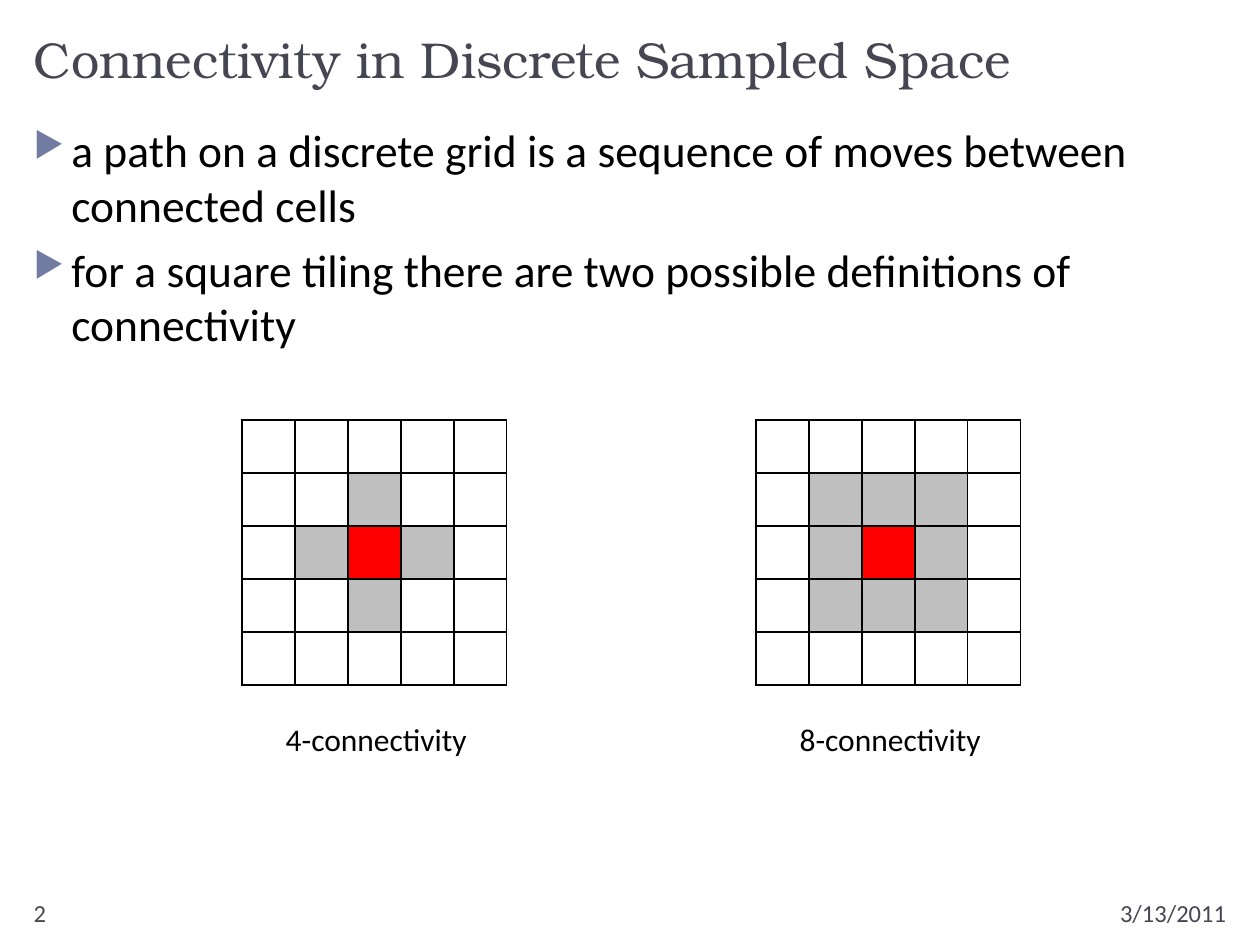
from lxml.etree import SubElement
from pptx import Presentation
from pptx.dml.color import RGBColor
from pptx.enum.text import MSO_ANCHOR, MSO_AUTO_SIZE, PP_ALIGN
from pptx.oxml.ns import qn
from pptx.util import Cm, Pt

COLOURS = {"slate": "464653", "ink": "000000", "bullet": "727CA3",
           ".": "FFFFFF", "n": "BFBFBF", "c": "FF0000"}
TITLE = "Connectivity in Discrete Sampled Space"
POINTS = [
    "a path on a discrete grid is a sequence of moves between connected cells",
    "for a square tiling there are two possible definitions of connectivity",
]
GRIDS = [
    ("4-connectivity", 4.88, [".....", "..n..", ".ncn.", "..n..", "....."]),
    ("8-connectivity", 15.24, [".....", ".nnn.", ".ncn.", ".nnn.", "....."]),
]
FOOTERS = [("3/13/2011", 20.32, 4.65, PP_ALIGN.RIGHT), ("2", 0.43, 5.51, PP_ALIGN.LEFT)]
FORMATS = {
    "title": {"name": "TeX Gyre Bonum", "size": Pt(28.8), "colour": "slate"},
    "point": {"name": "Calibri", "size": Pt(26), "colour": "ink"},
    "caption": {"name": "Calibri", "size": Pt(18), "colour": "ink"},
    "footer": {"name": "Calibri", "size": Pt(14), "colour": "slate"},
}
GRID_TOP, CELL = 8.47, 1.067
CAPTION_TOP, CAPTION_SHIFT = 14.39, 0.63


def rgb(key):
    """Return the named colour."""
    return RGBColor.from_string(COLOURS[key])


def write(shape, lines, style, align=PP_ALIGN.LEFT, **frame_values):
    """Fill a shape with formatted paragraphs."""
    frame = shape.text_frame
    frame.text = "\n".join(lines)
    values = {"word_wrap": True, "auto_size": MSO_AUTO_SIZE.NONE, **frame_values}
    for attribute, value in values.items():
        setattr(frame, attribute, value)
    for paragraph in frame.paragraphs:
        paragraph.alignment = align
        font = paragraph.runs[0].font
        for attribute, value in FORMATS[style].items():
            if attribute == "colour":
                font.color.rgb = rgb(value)
            else:
                setattr(font, attribute, value)
    return frame.paragraphs


def add_bullet(paragraph):
    """Give a paragraph a hanging triangle bullet."""
    paragraph.space_before = Pt(6)
    properties = paragraph._p.get_or_add_pPr()
    properties.set("marL", str(Cm(0.76)))
    properties.set("indent", str(-Cm(0.76)))
    colour = SubElement(properties, qn("a:buClr"))
    SubElement(colour, qn("a:srgbClr"), val=COLOURS["bullet"])
    SubElement(properties, qn("a:buSzPct"), val="76000")
    SubElement(properties, qn("a:buChar"), char="▶")


def add_borders(cell):
    """Draw a thin line on all sides of a cell."""
    properties = cell._tc.get_or_add_tcPr()
    for side in ("lnL", "lnR", "lnT", "lnB"):
        line = SubElement(properties, qn(f"a:{side}"), w=str(Pt(1)))
        fill = SubElement(line, qn("a:solidFill"))
        SubElement(fill, qn("a:srgbClr"), val=COLOURS["ink"])


def add_grid(slide, left, pattern):
    """Add a square grid coloured by its pattern."""
    count = len(pattern)
    side = Cm(CELL * count)
    grid = slide.shapes.add_table(count, count, Cm(left), Cm(GRID_TOP), side, side).table
    grid.first_row = grid.horz_banding = False
    for index, marks in enumerate(pattern):
        grid.rows[index].height = grid.columns[index].width = Cm(CELL)
        for column, mark in enumerate(marks):
            cell = grid.cell(index, column)
            add_borders(cell)
            cell.fill.solid()
            cell.fill.fore_color.rgb = rgb(mark)


def main():
    """Build and save the slide."""
    deck = Presentation()
    deck.slide_width, deck.slide_height = Cm(25.4), Cm(19.05)
    slide = deck.slides.add_slide(deck.slide_layouts[5])

    def add_box(left, top, width, height):
        """Add an empty text box."""
        return slide.shapes.add_textbox(Cm(left), Cm(top), Cm(width), Cm(height))

    title = slide.shapes.title
    place = {"left": 0.43, "top": 0.43, "width": 24.55, "height": 1.48}
    for attribute, value in place.items():
        setattr(title, attribute, Cm(value))
    write(title, [TITLE], "title", vertical_anchor=MSO_ANCHOR.BOTTOM)

    for text, left, width, align in FOOTERS:
        write(add_box(left, 17.98, width, 0.69), [text], "footer", align)
    for paragraph in write(add_box(0.43, 2.34, 24.55, 15.24), POINTS, "point"):
        add_bullet(paragraph)
    for caption, left, pattern in GRIDS:
        add_grid(slide, left, pattern)
        label = add_box(left + CAPTION_SHIFT, CAPTION_TOP, 4.17, 1.02)
        write(label, [caption], "caption", word_wrap=False,
              auto_size=MSO_AUTO_SIZE.SHAPE_TO_FIT_TEXT)
    deck.save("out.pptx")


if __name__ == "__main__":
    main()
